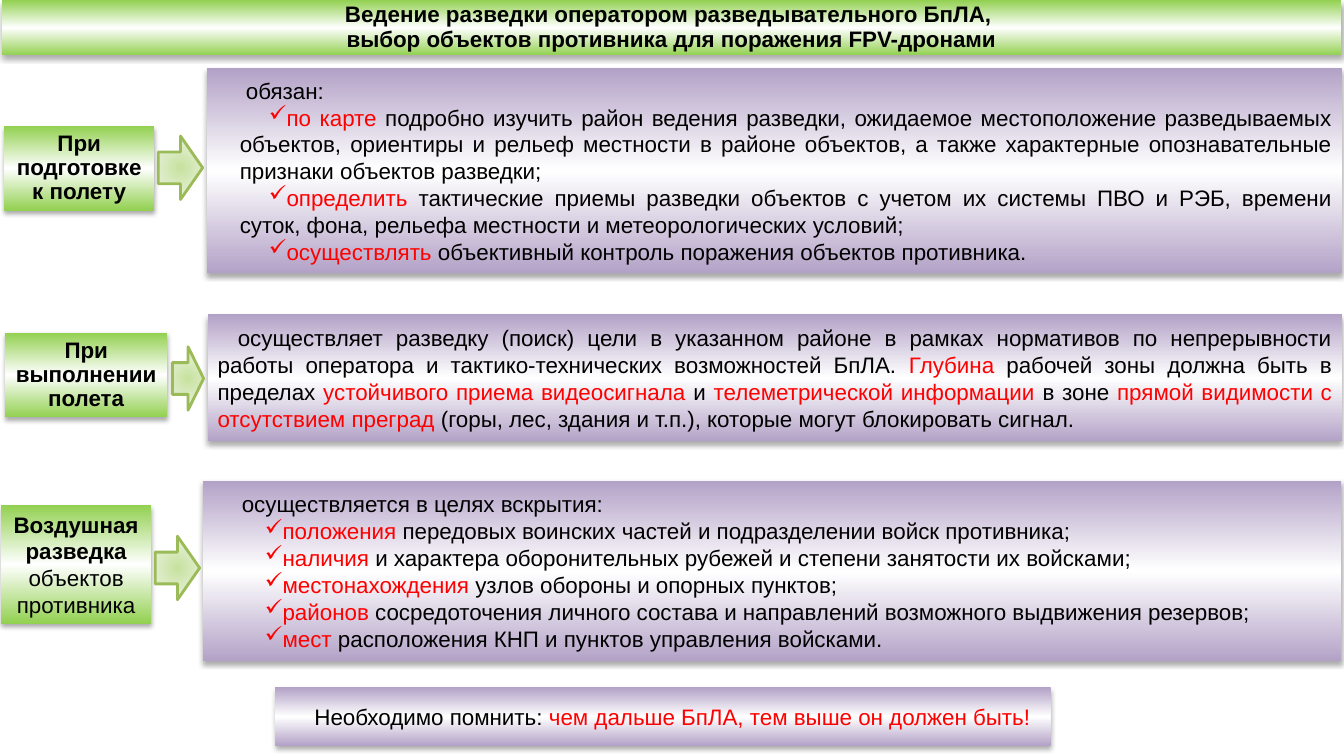
from lxml import etree
from pptx import Presentation
from pptx.dml.color import RGBColor
from pptx.enum.shapes import MSO_SHAPE
from pptx.enum.text import MSO_ANCHOR, MSO_AUTO_SIZE, PP_ALIGN
from pptx.oxml.ns import qn
from pptx.util import Inches, Pt

RECTANGLE, RIGHT_ARROW = MSO_SHAPE.RECTANGLE, MSO_SHAPE.RIGHT_ARROW
CENTER, JUSTIFY = PP_ALIGN.CENTER, PP_ALIGN.JUSTIFY
MIDDLE, NO_AUTOFIT = MSO_ANCHOR.MIDDLE, MSO_AUTO_SIZE.NONE
TITLE_ONLY = 5

THEME = {
    "font": "Arial", "size": Pt(16),
    "text": RGBColor.from_string("000000"),
    "accent": RGBColor.from_string("FF0000"),
    "arrow_line": RGBColor.from_string("9BBB59"),
    "green": ("92D050", "FFFFFF", "92D050"),
    "violet": ("B3A2C7", "FFFFFF", "B3A2C7"),
    "arrow": ("C7E29E", "DBEBC4", "EDF5E2"),
}

# A paragraph is a list of (text, style) runs.
PLAIN, RED, BOLD = "plain", "red", "bold"
TITLE = [
    [("Ведение разведки оператором разведывательного БпЛА, ", BOLD)],
    [("выбор объектов противника для поражения FPV-дронами", BOLD)],
]
REMINDER = [[("Необходимо помнить: ", PLAIN),
             ("чем дальше БпЛА, тем выше он должен быть!", RED)]]
DUTIES = [
    [("обязан:", PLAIN)],
    [("по карте ", RED),
     ("подробно изучить район ведения разведки, ожидаемое местоположение "
      "разведываемых объектов, ориентиры и рельеф местности в районе объектов, "
      "а также характерные опознавательные признаки объектов разведки;", PLAIN)],
    [("определить", RED),
     (" тактические приемы разведки объектов с учетом их системы ПВО и РЭБ, "
      "времени суток, фона, рельефа местности и метеорологических условий;", PLAIN)],
    [("осуществлять", RED),
     (" объективный контроль поражения объектов противника.", PLAIN)],
]
FLIGHT = [[
    ("осуществляет разведку (поиск) цели в указанном районе в рамках нормативов "
     "по непрерывности работы оператора и тактико-технических возможностей БпЛА. ",
     PLAIN),
    ("Глубина", RED), (" рабочей зоны должна быть в пределах ", PLAIN),
    ("устойчивого приема видеосигнала ", RED), ("и", PLAIN),
    (" телеметрической информации ", RED), ("в зоне ", PLAIN),
    ("прямой видимости с отсутствием преград ", RED),
    ("(горы, лес, здания и т.п.), которые могут блокировать сигнал.", PLAIN),
]]
GOALS = [
    [("осуществляется в целях вскрытия:", PLAIN)],
    [("положения", RED),
     (" передовых воинских частей и подразделении войск противника;", PLAIN)],
    [("наличия", RED),
     (" и характера оборонительных рубежей и степени занятости их войсками;", PLAIN)],
    [("местонахождения", RED), (" узлов обороны и опорных пунктов;", PLAIN)],
    [("районов", RED),
     (" сосредоточения личного состава и направлений возможного выдвижения "
      "резервов;", PLAIN)],
    [("мест", RED), (" расположения КНП и пунктов управления войсками.", PLAIN)],
]

TITLE_BOX = (0.02, 0, 13.28, 0.55)
REMINDER_BOX = (2.73, 6.82, 7.69, 0.58)
INDENT, BULLET_MARGIN = 0.29, 0.23
STAGES = [
    {"label": [[("При подготовке к полету", BOLD)]], "label_spacing": 0.9,
     "label_box": (0.04, 1.25, 1.49, 0.84), "arrow_box": (1.57, 1.35, 0.44, 0.63),
     "text": DUTIES, "indent": INDENT, "panel_box": (2.05, 0.68, 11.26, 2.03)},
    {"label": [[("При выполнении полета", BOLD)]], "label_spacing": 0.9,
     "label_box": (0.05, 3.3, 1.61, 0.84), "arrow_box": (1.71, 3.44, 0.31, 0.63),
     "text": FLIGHT, "indent": 0.2, "panel_box": (2.06, 3.12, 11.25, 1.26)},
    {"label": [[("Воздушная разведка ", BOLD), ("объектов противника", PLAIN)]],
     "label_spacing": 1.0,
     "label_box": (0.01, 5.01, 1.49, 1.18), "arrow_box": (1.54, 5.32, 0.44, 0.63),
     "text": GOALS, "indent": INDENT, "panel_box": (2.01, 4.77, 11.29, 1.79)},
]


def set_values(target, values):
    for name, value in values.items():
        setattr(target, name, value)


def add_element(parent, tag, **attributes):
    element = etree.SubElement(parent, qn(tag))
    for name, value in attributes.items():
        element.set(name, str(value))
    return element


def fill_gradient(shape, colours, radial=False):
    """Spread the colours evenly, from top to bottom or from the centre out."""
    shape.fill.gradient()
    gradient = shape.element.spPr.find(qn("a:gradFill"))
    for child in list(gradient):
        gradient.remove(child)
    stops = add_element(gradient, "a:gsLst")
    for index, colour in enumerate(colours):
        stop = add_element(stops, "a:gs", pos=index * 100000 // (len(colours) - 1))
        add_element(stop, "a:srgbClr", val=colour)
    if radial:
        path = add_element(gradient, "a:path", path="circle")
        add_element(path, "a:fillToRect", l=50000, t=50000, r=50000, b=50000)
    else:
        add_element(gradient, "a:lin", ang=90 * 60000, scaled=0)


def add_shadow(shape):
    shape.shadow.inherit = False
    effects = shape.element.spPr.find(qn("a:effectLst"))
    shadow = add_element(effects, "a:outerShdw", blurRad=Pt(3.5), dist=Pt(2.2),
                         dir=90 * 60000, rotWithShape=0)
    colour = add_element(shadow, "a:srgbClr", val="000000")
    add_element(colour, "a:alpha", val=32000)


def write_text(shape, paragraphs, alignment, spacing=1.0, indent=0):
    """Write the paragraphs; in a list, all but the first get a check mark."""
    frame = shape.text_frame
    set_values(frame, {"word_wrap": True, "auto_size": NO_AUTOFIT,
                       "vertical_anchor": MIDDLE})
    for index, runs in enumerate(paragraphs):
        paragraph = frame.add_paragraph() if index else frame.paragraphs[0]
        set_values(paragraph, {"alignment": alignment, "line_spacing": spacing})
        if indent:
            bulleted = index > 0
            properties = paragraph._p.get_or_add_pPr()
            properties.set("marL", str(Inches(BULLET_MARGIN if bulleted else 0)))
            properties.set("indent", str(Inches(indent)))
            if bulleted:
                add_element(properties, "a:buChar", char="✓")
        for text, style in runs:
            run = paragraph.add_run()
            run.text = text
            set_values(run.font, {"name": THEME["font"], "size": THEME["size"],
                                  "bold": style == BOLD})
            run.font.color.rgb = THEME["accent" if style == RED else "text"]


def add_shape(slide, kind, box):
    return slide.shapes.add_shape(kind, *map(Inches, box))


def style_box(shape, colours):
    fill_gradient(shape, colours)
    shape.line.fill.background()
    add_shadow(shape)


def add_box(slide, box, colours, *text_options):
    shape = add_shape(slide, RECTANGLE, box)
    style_box(shape, colours)
    write_text(shape, *text_options)


def add_arrow(slide, box):
    arrow = add_shape(slide, RIGHT_ARROW, box)
    fill_gradient(arrow, THEME["arrow"], radial=True)
    arrow.line.color.rgb = THEME["arrow_line"]
    arrow.line.width = Pt(2)
    arrow.shadow.inherit = False


def main():
    presentation = Presentation()
    set_values(presentation, {"slide_width": Inches(13.33),
                              "slide_height": Inches(7.5)})
    slide = presentation.slides.add_slide(presentation.slide_layouts[TITLE_ONLY])
    title = slide.shapes.title
    set_values(title, dict(zip(("left", "top", "width", "height"),
                               map(Inches, TITLE_BOX))))
    style_box(title, THEME["green"])
    write_text(title, TITLE, CENTER, 0.9)
    add_box(slide, REMINDER_BOX, THEME["violet"], REMINDER, JUSTIFY, 1.0, INDENT)
    for stage in STAGES:
        add_box(slide, stage["panel_box"], THEME["violet"],
                stage["text"], JUSTIFY, 1.0, stage["indent"])
        add_box(slide, stage["label_box"], THEME["green"],
                stage["label"], CENTER, stage["label_spacing"])
        add_arrow(slide, stage["arrow_box"])
    presentation.save("out.pptx")


if __name__ == "__main__":
    main()
